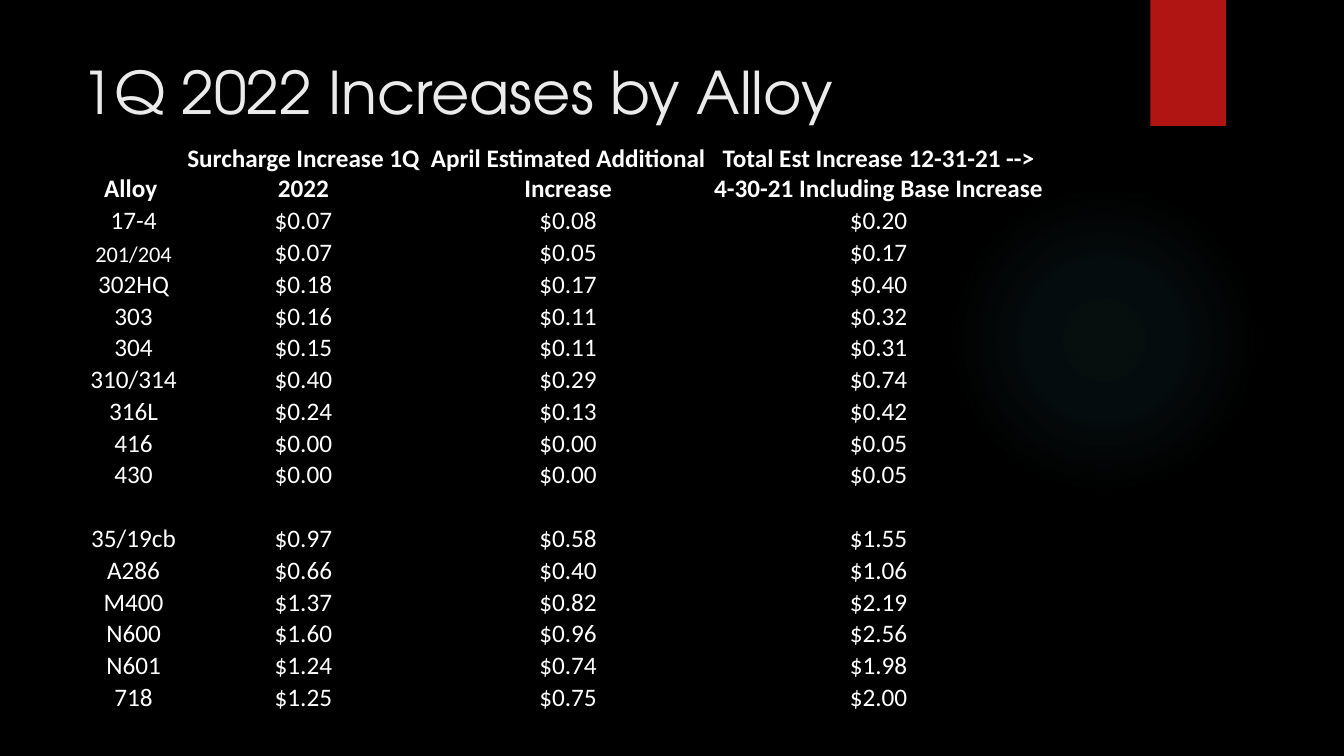
"""Build the slide of first-quarter 2022 price increases by alloy."""
import pptx
import pptx.dml.color
import pptx.enum.shapes
import pptx.enum.text
import pptx.oxml
import pptx.oxml.ns
import pptx.util
from pptx.util import Inches

COLORS = {"background": "000000", "glow": "50B9C1", "ribbon": "B01513",
          "title": "EBEBEB", "text": "FFFFFF"}
NO_GRID_STYLE = "{2D5ABB26-0587-4C30-8999-92F81FD0307C}"
XMLNS = pptx.oxml.ns.nsdecls("a")


def rgb(name):
    return pptx.dml.color.RGBColor.from_string(COLORS[name])


def add_run(paragraph, text, font_name, size, color, bold=False):
    run = paragraph.add_run()
    run.text = text
    run.font.name = font_name
    run.font.size = pptx.util.Pt(size)
    run.font.bold = bold
    run.font.color.rgb = rgb(color)


presentation = pptx.Presentation()
presentation.slide_width = Inches(13.33)
presentation.slide_height = Inches(7.5)
slide = presentation.slides.add_slide(presentation.slide_layouts[5])
slide.background.fill.solid()
slide.background.fill.fore_color.rgb = rgb("background")

glow = slide.shapes.add_shape(
    pptx.enum.shapes.MSO_SHAPE.OVAL,
    Inches(9.41), Inches(1.83), Inches(3.08), Inches(3.08))
glow.shadow.inherit = False
glow.line.fill.background()
glow.fill.background()
stops = "".join(
    f'<a:gs pos="{position * 1000}"><a:srgbClr val="{COLORS["glow"]}">'
    f'<a:alpha val="{alpha * 1000}"/></a:srgbClr></a:gs>'
    for position, alpha in [(0, 7), (36, 6), (69, 0)])
gradient = pptx.oxml.parse_xml(
    f'<a:gradFill {XMLNS} rotWithShape="1"><a:gsLst>{stops}</a:gsLst>'
    '<a:path path="circle"><a:fillToRect l="50000" t="50000" r="50000" b="50000"/>'
    '</a:path></a:gradFill>')
glow_properties = glow._element.spPr
glow_properties.replace(
    glow_properties.find(pptx.oxml.ns.qn("a:noFill")), gradient)

ribbon = slide.shapes.add_shape(
    pptx.enum.shapes.MSO_SHAPE.RECTANGLE,
    Inches(11.41), Inches(0), Inches(0.75), Inches(1.25))
ribbon.fill.solid()
ribbon.fill.fore_color.rgb = rgb("ribbon")
ribbon.line.fill.background()
ribbon.shadow.inherit = False
ribbon._element.spPr.find(pptx.oxml.ns.qn("a:effectLst")).append(
    pptx.oxml.parse_xml(
        f'<a:outerShdw {XMLNS} blurRad="38100" dist="25400" dir="5400000" rotWithShape="0">'
        '<a:srgbClr val="000000"><a:alpha val="45000"/></a:srgbClr></a:outerShdw>'))

title = slide.shapes.title
title.left, title.top = Inches(0.71), Inches(0.5)
title.width, title.height = Inches(10.29), Inches(1.53)
title.text_frame.vertical_anchor = pptx.enum.text.MSO_ANCHOR.TOP
title.text_frame.word_wrap = True
heading = title.text_frame.paragraphs[0]
heading.alignment = pptx.enum.text.PP_ALIGN.LEFT
add_run(heading, "1Q 2022 Increases by Alloy", "TeX Gyre Adventor", 42, "title")
slide.shapes._spTree.append(title._element)

increases = [
    ("Alloy ", "Surcharge Increase 1Q 2022", "April Estimated Additional Increase",
     "Total Est Increase 12-31-21 --> 4-30-21 Including Base Increase "),
    ("17-4", "$0.07", "$0.08", "$0.20"),
    ("201/204", "$0.07", "$0.05", "$0.17"),
    ("302HQ", "$0.18", "$0.17", "$0.40"),
    ("303", "$0.16", "$0.11", "$0.32"),
    ("304", "$0.15", "$0.11", "$0.31"),
    ("310/314", "$0.40", "$0.29", "$0.74"),
    ("316L", "$0.24", "$0.13", "$0.42"),
    ("416", "$0.00", "$0.00", "$0.05"),
    ("430", "$0.00", "$0.00", "$0.05"),
    ("", "", "", ""),
    ("35/19cb", "$0.97", "$0.58", "$1.55"),
    ("A286", "$0.66", "$0.40", "$1.06"),
    ("M400", "$1.37", "$0.82", "$2.19"),
    ("N600", "$1.60", "$0.96", "$2.56"),
    ("N601", "$1.24", "$0.74", "$1.98"),
    ("718", "$1.25", "$0.75", "$2.00"),
]
increase_table = slide.shapes.add_table(
    len(increases), 4, Inches(0.83), Inches(1.41), Inches(9.53), Inches(4.87)).table
increase_table.first_row = False
increase_table.horz_banding = False
increase_table._tbl.tblPr.find(pptx.oxml.ns.qn("a:tableStyleId")).text = NO_GRID_STYLE
for column, width in zip(increase_table.columns, [0.99, 2.38, 2.87, 3.29]):
    column.width = Inches(width)

for row_index, values in enumerate(increases):
    is_header = row_index == 0
    increase_table.rows[row_index].height = Inches(0.55 if is_header else 0.27)
    for column_index, value in enumerate(values):
        cell = increase_table.cell(row_index, column_index)
        cell.fill.background()
        cell.vertical_anchor = pptx.enum.text.MSO_ANCHOR.BOTTOM
        cell.margin_left = cell.margin_right = cell.margin_top = Inches(0.01)
        cell.margin_bottom = Inches(0)
        entry = cell.text_frame.paragraphs[0]
        entry.alignment = pptx.enum.text.PP_ALIGN.CENTER
        if value:
            size = 16 if value == "201/204" else 18
            add_run(entry, value, "Calibri", size, "text", is_header)

presentation.save("out.pptx")
